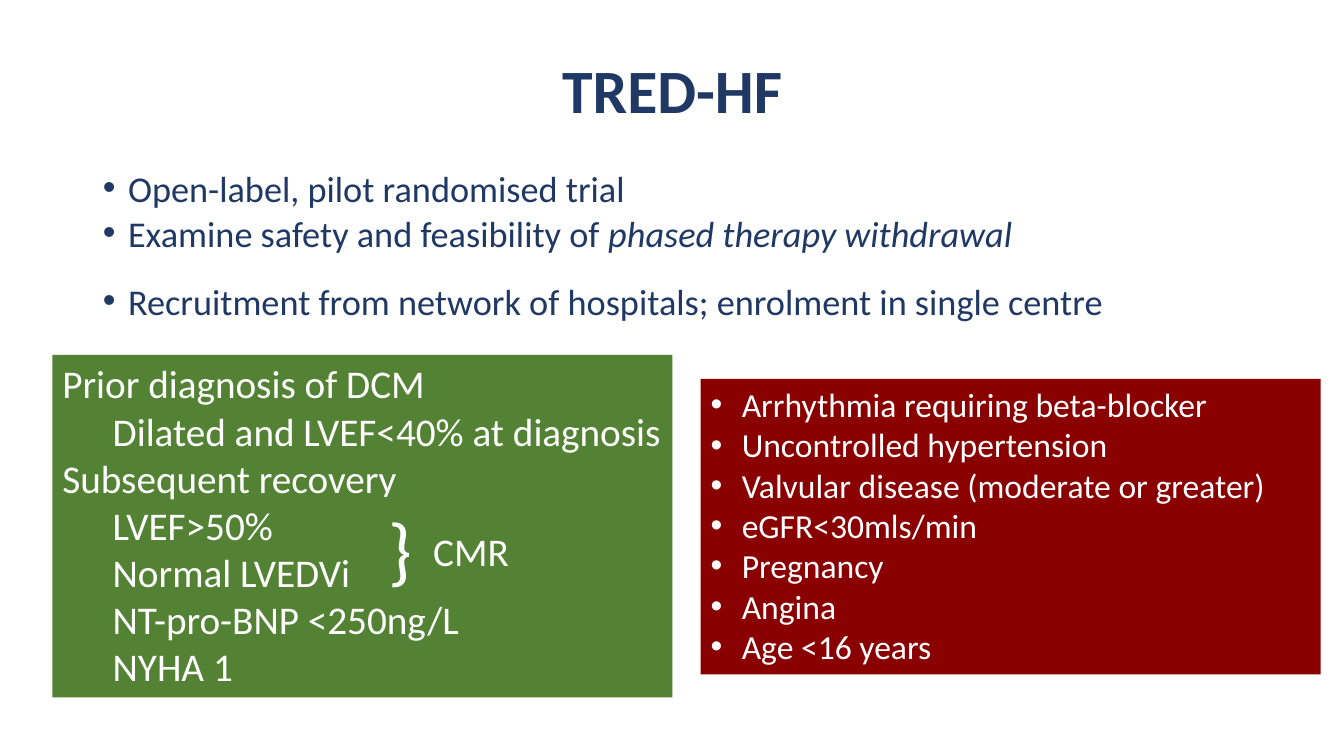
from dataclasses import dataclass

from pptx import Presentation
from pptx.dml.color import RGBColor
from pptx.enum.text import MSO_ANCHOR, MSO_AUTO_SIZE as AutoSize, PP_ALIGN
from pptx.oxml.xmlchemy import OxmlElement as Element
from pptx.util import Inches, Pt

NAVY, GREEN, RED, WHITE = "203864", "548235", "8A0000", "FFFFFF"
WIDTH, HEIGHT = Inches(13.33), Inches(7.5)


@dataclass
class Area:
    left: float
    top: float
    width: float
    height: float

    def place(self, sp) -> None:
        sp.left = int(WIDTH * self.left / 100)
        sp.top = int(HEIGHT * self.top / 100)
        sp.width = int(WIDTH * self.width / 100)
        sp.height = int(HEIGHT * self.height / 100)


@dataclass
class Line:
    text: str
    italic: str = ""
    indent: float = 0
    before: float = 0


@dataclass
class Panel:
    area: Area
    fill: str
    size: float
    lines: list[Line]
    hang: float = 0
    wrap: bool = True


def colour(value: str) -> RGBColor:
    return RGBColor.from_string(value)


def add_run(p, text: str, *, size: float, color: str, bold=False, italic=False) -> None:
    r = p.add_run()
    r.text = text
    r.font.name = "Calibri"
    r.font.size = Pt(size)
    r.font.bold = bold
    r.font.italic = italic
    r.font.color.rgb = colour(color)


def set_indent(p, indent: float, hang: float) -> None:
    pPr = p._p.get_or_add_pPr()
    pPr.set("marL", str(Inches(indent + hang)))
    pPr.set("indent", str(Inches(-hang)))
    if hang:
        font, char = Element("a:buFont"), Element("a:buChar")
        font.set("typeface", "Arial")
        char.set("char", "•")
        pPr.extend([font, char])


def write_lines(tf, lines: list[Line], *, size: float, color: str, hang=0.0, spacing=1.0) -> None:
    for i, line in enumerate(lines):
        p = tf.add_paragraph() if i else tf.paragraphs[0]
        p.line_spacing = spacing
        p.space_before = Pt(line.before)
        p.level = 1 if line.indent else 0
        set_indent(p, line.indent, hang)
        add_run(p, line.text, size=size, color=color)
        if line.italic:
            add_run(p, line.italic, size=size, color=color, italic=True)


def add_panel(s, panel: Panel) -> None:
    sp = s.shapes.add_textbox(0, 0, 0, 0)
    panel.area.place(sp)
    sp.fill.solid()
    sp.fill.fore_color.rgb = colour(panel.fill)
    tf = sp.text_frame
    tf.word_wrap = panel.wrap
    tf.auto_size = AutoSize.SHAPE_TO_FIT_TEXT
    write_lines(tf, panel.lines, size=panel.size, color=WHITE, hang=panel.hang)


AIMS = [
    Line("Open-label, pilot randomised trial", before=10),
    Line("Examine safety and feasibility of ", "phased therapy withdrawal", before=10),
    Line("Recruitment from network of hospitals; enrolment in single centre", before=27),
]
INCLUSION = [
    Line("Prior diagnosis of DCM"),
    Line("Dilated and LVEF<40% at diagnosis", indent=0.5),
    Line("Subsequent recovery"),
    Line("LVEF>50%", indent=0.5),
    Line("Normal LVEDVi", indent=0.5),
    Line("NT-pro-BNP <250ng/L", indent=0.5),
    Line("NYHA 1", indent=0.5),
]
EXCLUSION = [
    Line("Arrhythmia requiring beta-blocker"),
    Line("Uncontrolled hypertension"),
    Line("Valvular disease (moderate or greater)"),
    Line("eGFR<30mls/min"),
    Line("Pregnancy"),
    Line("Angina"),
    Line("Age <16 years"),
]
PANELS = [
    Panel(Area(3.9, 46.93, 46.13, 45.33), GREEN, 28, INCLUSION),
    Panel(Area(28.2, 65.73, 3.3, 13.47), GREEN, 54, [Line("}")], wrap=False),
    Panel(Area(31.5, 69.07, 7.2, 7.6), GREEN, 28, [Line("CMR")], wrap=False),
    Panel(Area(52.13, 50.13, 46.13, 39.07), RED, 24, EXCLUSION, hang=0.31),
]


def main() -> None:
    prs = Presentation()
    prs.slide_width, prs.slide_height = WIDTH, HEIGHT
    s = prs.slides.add_slide(prs.slide_layouts[1])

    title, body = s.shapes.title, s.placeholders[1]
    Area(6.9, 2.67, 86.25, 19.33).place(title)
    Area(6.9, 22.93, 86.25, 21.6).place(body)
    for sp, anchor in ((title, MSO_ANCHOR.MIDDLE), (body, MSO_ANCHOR.TOP)):
        sp.text_frame.auto_size = AutoSize.NONE
        sp.text_frame.vertical_anchor = anchor

    p = title.text_frame.paragraphs[0]
    p.alignment = PP_ALIGN.CENTER
    p.line_spacing = 0.9
    add_run(p, "TRED-HF", size=44, color=NAVY, bold=True)
    write_lines(body.text_frame, AIMS, size=25.9, color=NAVY, hang=0.25, spacing=0.7)

    for panel in PANELS:
        add_panel(s, panel)
    prs.save("out.pptx")


if __name__ == "__main__":
    main()
